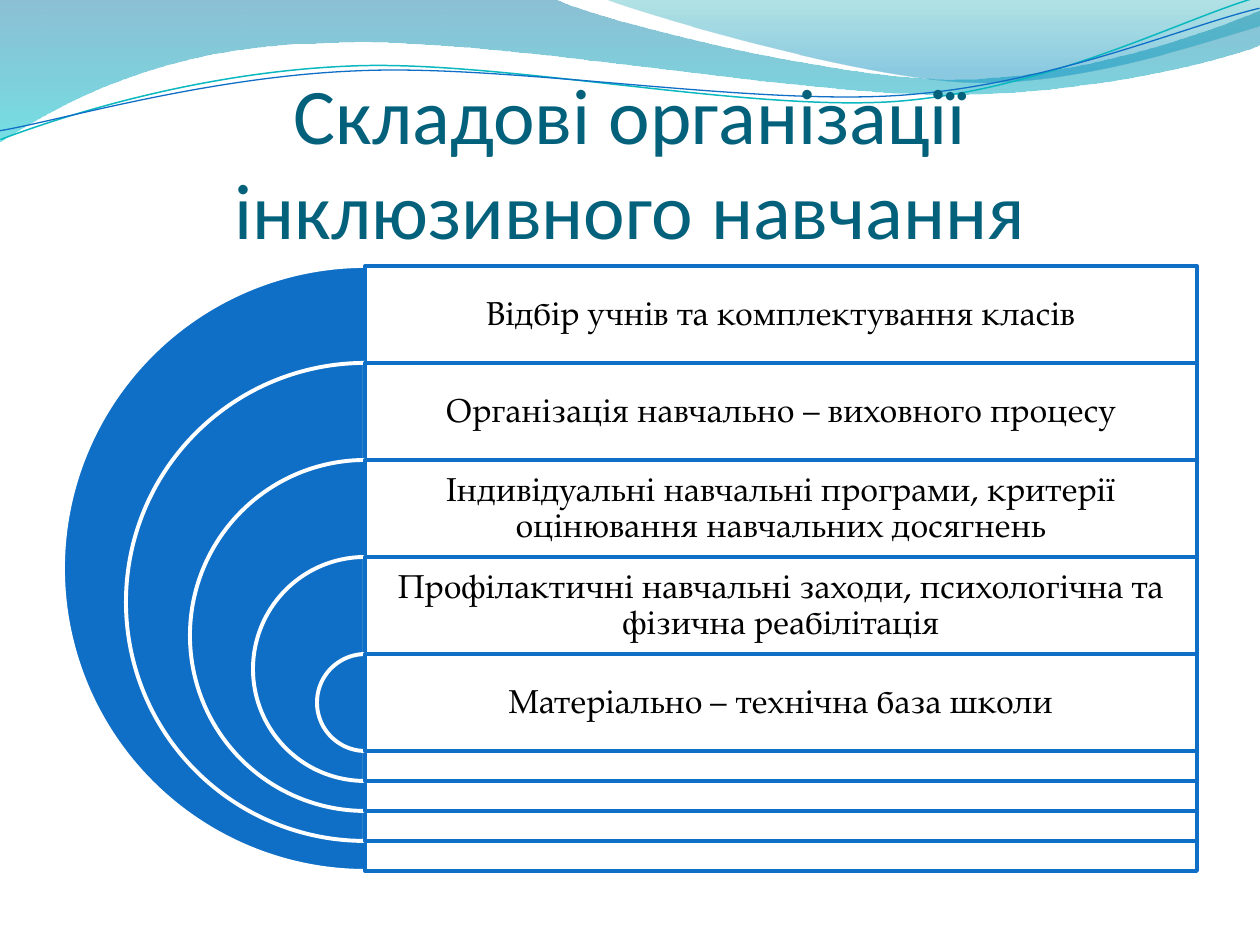
from lxml import etree
from pptx import Presentation
from pptx.dml.color import RGBColor
from pptx.enum import shapes, text
from pptx.oxml import ns
from pptx.util import Pt

PX = 914400 // 126
BLUE = RGBColor(0x0F, 0x6F, 0xC6)
TEAL = RGBColor(0x04, 0x61, 0x7B)
AQUA = RGBColor(0x0A, 0xB8, 0xBF)
WHITE = RGBColor(0xFF, 0xFF, 0xFF)
BLACK = RGBColor(0, 0, 0)

BAND_FILL = [(0, RGBColor(0x00, 0x74, 0xA1), 45),
             (1, RGBColor(0x00, 0xC6, 0xCF), 55)]
CREST_FILL = [(0, RGBColor(0x00, 0xA1, 0xA9), 30),
              (0.8, RGBColor(0x00, 0x8B, 0xBF), 45)]

# Each curve is a start point followed by three points per Bezier segment.
BAND = [[(0, 0)],
        [(554, -1), (600, 21), (837, 79), (955, 79),
         (1075, 79), (1207, 33), (1260, 11)],
        [(1261, 45), (1239, 55), (1096, 96), (940, 94),
         (784, 94), (481, 35), (324, 43),
         (163, 45), (58, 105), (-1, 142)]]
CREST = [[(604, -1), (641, 14), (859, 78), (969, 82),
          (1079, 86), (1211, 40), (1260, 26)],
         [(1260, 0)]]
AQUA_LINE = [[(-2, 110), (59, 90), (199, 52), (350, 53),
              (499, 53), (745, 118), (896, 114),
              (1049, 109), (1184, 45), (1260, 27)]]
BLUE_LINE = [[(-2, 101), (57, 94), (207, 57), (357, 58),
              (509, 58), (750, 112), (902, 108),
              (1052, 104), (1187, 52), (1262, 38)]]
TILT = 357.3

TITLE = "Складові організації інклюзивного навчання"
ITEMS = [
    "Відбір учнів та комплектування класів",
    "Організація навчально – виховного процесу",
    "Індивідуальні навчальні програми, критерії оцінювання навчальних досягнень",
    "Профілактичні навчальні заходи, психологічна та фізична реабілітація",
    "Матеріально – технічна база школи",
]
MID, TOP, WIDTH = 365, 266, 832
ROW, RING, SHRINK = 97, 605, 127


def box(*dims):
    return [n * PX for n in dims]


def fade(shape, alphas):
    """Set the opacity, in percent, of the shape's colours in order."""
    for tag, alpha in zip(shape._element.spPr.iter(ns.qn("a:srgbClr")), alphas):
        etree.SubElement(tag, ns.qn("a:alpha")).set("val", str(alpha * 1000))


def bend(shape, curves):
    """Join the straight steps of each curve, three by three, into Beziers."""
    steps = list(shape._element.iter(ns.qn("a:moveTo"), ns.qn("a:lnTo")))
    for curve in curves:
        part, steps = steps[1:len(curve)], steps[len(curve):]
        for i in range(0, len(part), 3):
            bezier = etree.Element(ns.qn("a:cubicBezTo"))
            part[i].addprevious(bezier)
            for step in part[i:i + 3]:
                bezier.append(step[0])
                step.getparent().remove(step)


def add_outline(slide, curves, close):
    dots = sum(curves, [])
    pen = slide.shapes.build_freeform(*dots[0], scale=PX)
    pen.add_line_segments(dots[1:], close=close)
    shape = pen.convert_to_shape()
    shape.shadow.inherit = False
    bend(shape, curves)
    return shape


def add_wave(slide, curves, stops):
    wave = add_outline(slide, curves, True)
    wave.line.fill.background()
    wave.fill.gradient()
    wave.fill.gradient_angle = 270
    for stop, (pos, color, _) in zip(wave.fill.gradient_stops, stops):
        stop.position = pos
        stop.color.rgb = color
    fade(wave, [alpha for _, _, alpha in stops])


def add_curve(slide, curves, color, width):
    curve = add_outline(slide, curves, False)
    curve.rotation = TILT
    curve.fill.background()
    curve.line.color.rgb = color
    curve.line.width = Pt(width)


def style(par, name, size, color):
    par.alignment = text.PP_ALIGN.CENTER
    par.font.name = name
    par.font.size = Pt(size)
    par.font.color.rgb = color


def add_title(slide):
    title = slide.shapes.title
    slide.shapes._spTree.append(title._element)  # bring in front of the waves
    title.left, title.top, title.width, title.height = box(63, 97, 1134, 158)
    frame = title.text_frame
    frame.text = TITLE
    frame.auto_size = text.MSO_AUTO_SIZE.NONE
    frame.vertical_anchor = text.MSO_ANCHOR.BOTTOM
    frame.margin_left = frame.margin_right = frame.margin_bottom = 0
    style(frame.paragraphs[0], "Calibri", 45, TEAL)


def add_solid(slide, kind, dims, fill, edge):
    shape = slide.shapes.add_shape(kind, *box(*dims))
    shape.shadow.inherit = False
    shape.fill.solid()
    shape.fill.fore_color.rgb = fill
    shape.line.color.rgb = edge
    shape.line.width = Pt(2.25)
    return shape


def add_label(slide, words, top):
    frame = slide.shapes.add_textbox(*box(MID, top, WIDTH, ROW)).text_frame
    frame.word_wrap = True
    frame.vertical_anchor = text.MSO_ANCHOR.MIDDLE
    frame.margin_left = frame.margin_right = 10 * PX
    frame.margin_top = frame.margin_bottom = 10 * PX
    frame.text = words
    par = frame.paragraphs[0]
    par.line_spacing = 0.9
    style(par, "TeX Gyre Pagella", 19, BLACK)


def add_layer(slide, index, words):
    """Add one half ring with its panel and label."""
    size = RING - index * SHRINK
    top = TOP + index * ROW
    pie = add_solid(slide, shapes.MSO_SHAPE.PIE,
                    (MID - size // 2, top, size, size), BLUE, WHITE)
    pie.adjustments[0], pie.adjustments[1] = 54, 162
    panel = add_solid(slide, shapes.MSO_SHAPE.RECTANGLE,
                      (MID, top, WIDTH, size), WHITE, BLUE)
    fade(panel, [90])
    add_label(slide, words, top)


def main():
    deck = Presentation()
    deck.slide_width, deck.slide_height = 1260 * PX, 945 * PX
    slide = deck.slides.add_slide(deck.slide_layouts[5])
    add_wave(slide, BAND, BAND_FILL)
    add_wave(slide, CREST, CREST_FILL)
    add_curve(slide, AQUA_LINE, AQUA, 0.85)
    add_curve(slide, BLUE_LINE, BLUE, 0.75)
    add_title(slide)
    for index, words in enumerate(ITEMS):
        add_layer(slide, index, words)
    deck.save("out.pptx")


if __name__ == "__main__":
    main()
